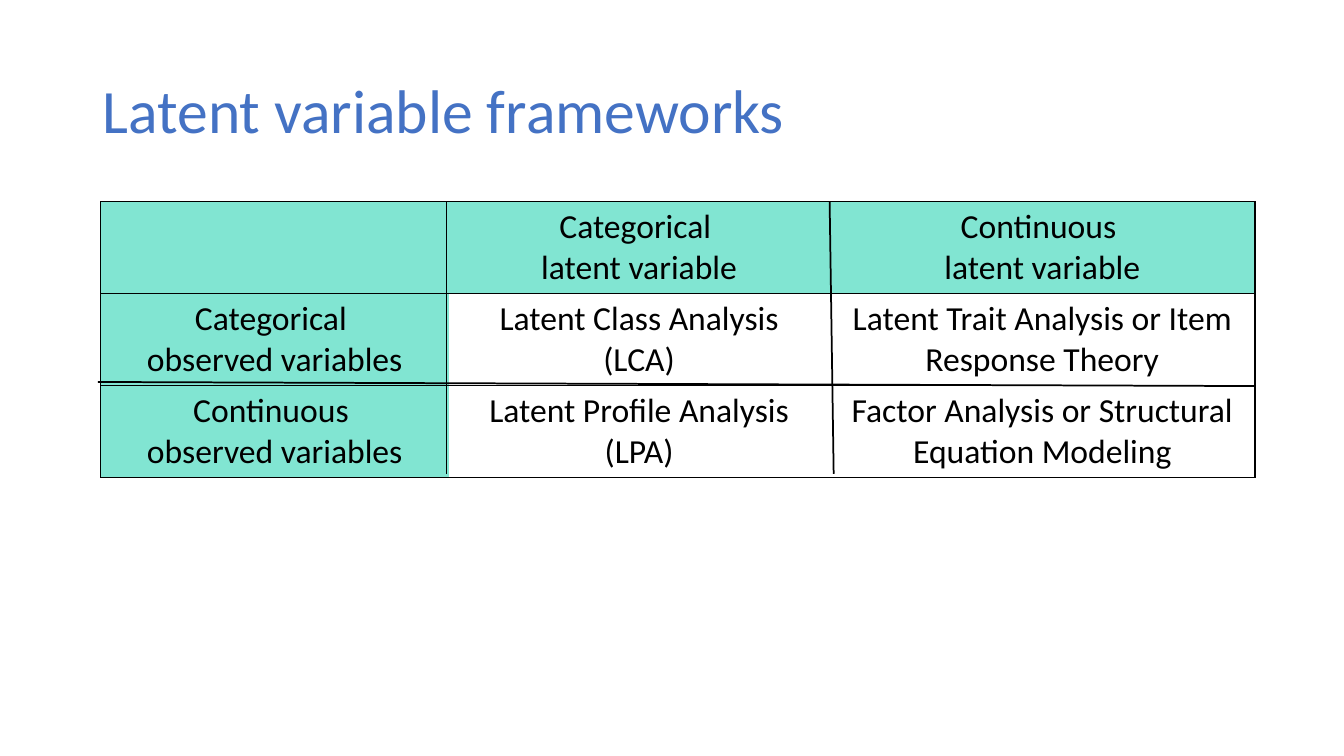
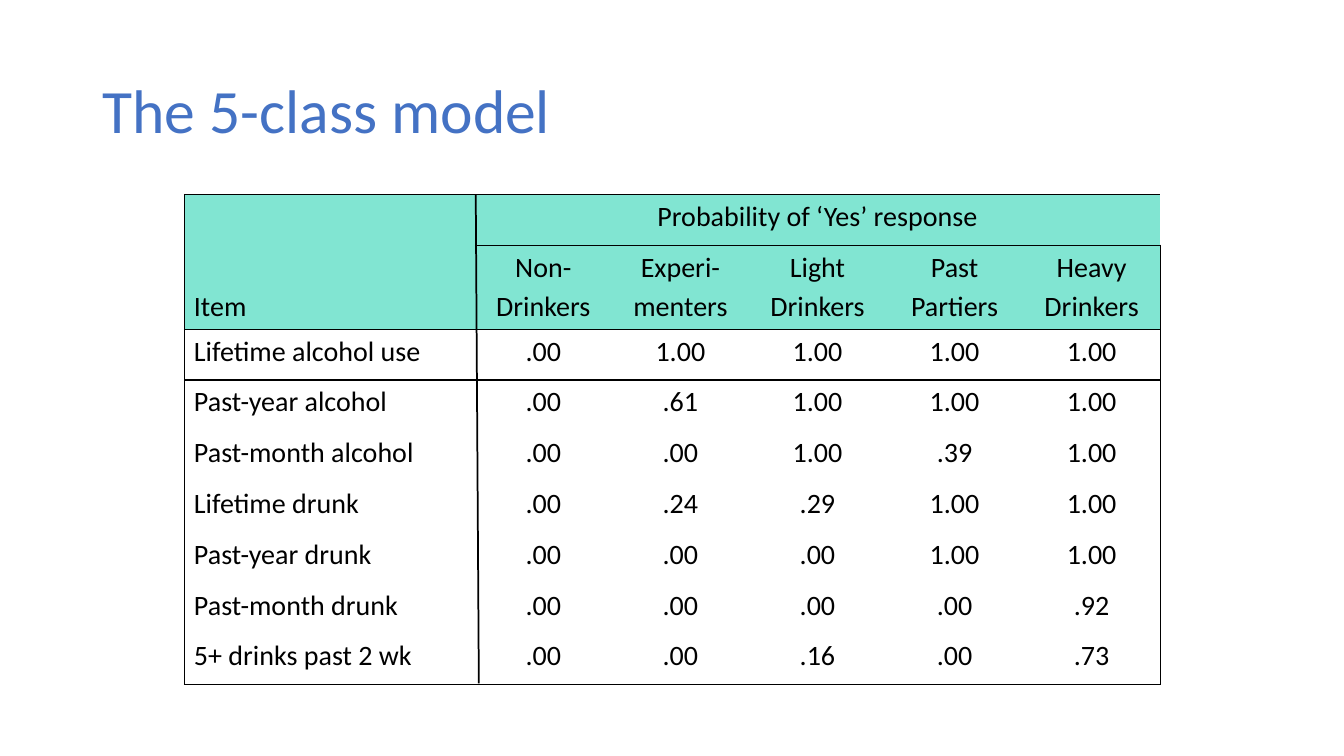
import dataclasses
import typing

import pptx
import pptx.dml.color
import pptx.enum.shapes
import pptx.enum.text
import pptx.oxml
import pptx.oxml.ns
import pptx.util

# Shared look
WIDE, HIGH = 13.33, 7.5
FONT = "Calibri"
BLUE, MINT, BLACK = "4472C4", "81E5D2", "000000"
PLAIN = "{2D5ABB26-0587-4C30-8999-92F81FD0307C}"  # table style without grid
BREAK, PARA = "|", "¶"  # marks for a line break and a new paragraph
MID = pptx.enum.text.MSO_ANCHOR.MIDDLE
TOP = pptx.enum.text.MSO_ANCHOR.TOP
LOW = pptx.enum.text.MSO_ANCHOR.BOTTOM
LEFT = pptx.enum.text.PP_ALIGN.LEFT
MIDST = pptx.enum.text.PP_ALIGN.CENTER
Spot = tuple[int, int]


@dataclasses.dataclass(frozen=True)
class Rule:
    """A straight line; ends in percent of the slide."""
    x1: float
    y1: float
    x2: float
    y2: float


@dataclasses.dataclass(frozen=True)
class Grid:
    """A table; lengths in percent of the slide."""
    left: float
    top: float
    cols: list[float]
    rows: list[float]
    texts: list[list[str]]
    size: int
    inset: float
    anchor: typing.Any
    heads: int            # filled rows at the top
    side: bool            # first column filled
    first: typing.Any     # alignment of the first column
    under: set[Spot]      # cells with a line below
    wide: Spot | None = None  # cell that spans to the last column
    low: Spot | None = None   # cell with its text at the bottom


@dataclasses.dataclass(frozen=True)
class Page:
    title: str
    grid: Grid
    rules: list[Rule]


# Helpers
def across(share: float) -> int:
    return pptx.util.Inches(WIDE * share / 100)


def down(share: float) -> int:
    return pptx.util.Inches(HIGH * share / 100)


def tint(code: str) -> pptx.dml.color.RGBColor:
    return pptx.dml.color.RGBColor.from_string(code)


def write(para: typing.Any, text: str, size: int, code: str) -> None:
    for num, part in enumerate(text.split(BREAK)):
        if num:
            para.add_line_break()
        run = para.add_run()
        run.text = part
        run.font.name = FONT
        run.font.size = pptx.util.Pt(size)
        run.font.color.rgb = tint(code)


def head(slide: typing.Any, text: str) -> None:
    box = slide.shapes.add_textbox(across(6.9), down(5.33), across(86.25), down(19.33))
    frame = box.text_frame
    frame.word_wrap = True
    frame.vertical_anchor = MID
    para = frame.paragraphs[0]
    para.line_spacing = 0.9
    write(para, text, 44, BLUE)


def draw(slide: typing.Any, rule: Rule) -> None:
    line = slide.shapes.add_connector(
        pptx.enum.shapes.MSO_CONNECTOR.STRAIGHT,
        across(rule.x1), down(rule.y1), across(rule.x2), down(rule.y2))
    line.line.color.rgb = tint(BLACK)
    line.line.width = pptx.util.Pt(1.25)
    props = line.element.find(pptx.oxml.ns.qn("p:spPr"))
    props.append(pptx.oxml.parse_xml(
        f"<a:effectLst {pptx.oxml.ns.nsdecls('a')}/>"))


def edge(cell: typing.Any, sides: str) -> None:
    props = cell._tc.get_or_add_tcPr()
    for side in sides:
        props.append(pptx.oxml.parse_xml(
            f'<a:ln{side} {pptx.oxml.ns.nsdecls("a")} w="12700"><a:solidFill>'
            f'<a:srgbClr val="{BLACK}"/></a:solidFill></a:ln{side}>'))


def sides(grid: Grid, row: int, col: int) -> str:
    tests = {
        "L": col == 0,
        "R": col == len(grid.cols) - 1,
        "T": row == 0 or (row - 1, col) in grid.under,
        "B": row == len(grid.rows) - 1 or (row, col) in grid.under,
    }
    return "".join(side for side, on in tests.items() if on)


def fill(cell: typing.Any, grid: Grid, row: int, col: int) -> None:
    edge(cell, sides(grid, row, col))
    if row < grid.heads or (grid.side and col == 0):
        cell.fill.solid()
        cell.fill.fore_color.rgb = tint(MINT)
    else:
        cell.fill.background()
    cell.margin_left = cell.margin_right = across(grid.inset)
    cell.vertical_anchor = LOW if (row, col) == grid.low else grid.anchor
    text = grid.texts[row][col]
    if not text:
        return
    frame = cell.text_frame
    for num, part in enumerate(text.split(PARA)):
        para = frame.add_paragraph() if num else frame.paragraphs[0]
        if num:
            para.space_before = pptx.util.Pt(grid.size * 0.2)
        para.alignment = MIDST if col else grid.first
        write(para, part, grid.size, BLACK)


def chart(slide: typing.Any, grid: Grid) -> None:
    shape = slide.shapes.add_table(
        len(grid.rows), len(grid.cols), across(grid.left), down(grid.top),
        across(sum(grid.cols)), down(sum(grid.rows)))
    table = shape.table
    table.first_row = table.horz_banding = False
    next(shape.element.iter(pptx.oxml.ns.qn("a:tableStyleId"))).text = PLAIN
    for col, share in enumerate(grid.cols):
        table.columns[col].width = across(share)
    for row, share in enumerate(grid.rows):
        table.rows[row].height = down(share)
        for col in range(len(grid.cols)):
            fill(table.cell(row, col), grid, row, col)
    if grid.wide:
        row, col = grid.wide
        table.cell(row, col).merge(table.cell(row, len(grid.cols) - 1))


# Content
FRAMES = Page(
    "Latent variable frameworks",
    Grid(
        left=7.5, top=26.67, cols=[25.88, 28.35, 31.65], rows=[12.18] * 3,
        texts=[
            ["", "Categorical |latent variable", "Continuous |latent variable"],
            ["Categorical |observed variables", "Latent Class Analysis (LCA)",
             "Latent Trait Analysis or Item Response Theory"],
            ["Continuous |observed variables", "Latent Profile Analysis (LPA)",
             "Factor Analysis or Structural Equation Modeling"],
        ],
        size=24, inset=1.2, anchor=MID, heads=1, side=True, first=MIDST,
        under={(row, col) for row in range(2) for col in range(3)}),
    [Rule(7.28, 50.53, 93.38, 51.07),
     Rule(61.73, 26.67, 62.03, 62.67),
     Rule(33.23, 26.67, 33.23, 62.67)])

ODDS = {
    "Lifetime alcohol use": ".00 1.00 1.00 1.00 1.00",
    "Past-year alcohol": ".00 .61 1.00 1.00 1.00",
    "Past-month alcohol": ".00 .00 1.00 .39 1.00",
    "Lifetime drunk": ".00 .24 .29 1.00 1.00",
    "Past-year drunk": ".00 .00 .00 1.00 1.00",
    "Past-month drunk": ".00 .00 .00 .00 .92",
    "5+ drinks past 2 wk": ".00 .00 .16 .00 .73",
}
MODEL = Page(
    "The 5-class model",
    Grid(
        left=13.73, top=25.73, cols=[21.6] + [10.2] * 5,
        rows=[6.72, 11.11] + [6.72] * len(ODDS),
        texts=[
            ["", "Probability of ‘Yes’ response", "", "", "", ""],
            ["Item", "Non-¶Drinkers", "Experi-¶menters", "Light¶Drinkers",
             "Past¶Partiers", "Heavy¶Drinkers"],
            *([item, *odds.split()] for item, odds in ODDS.items()),
        ],
        size=20, inset=0.7, anchor=TOP, heads=2, side=False, first=LEFT,
        under={(0, col) for col in range(1, 6)} | {(1, col) for col in range(6)},
        wide=(0, 1), low=(1, 0)),
    [Rule(35.4, 25.73, 35.63, 90.4),
     Rule(13.73, 50.27, 86.33, 50.27)])


def main() -> None:
    deck = pptx.Presentation()
    deck.slide_width, deck.slide_height = across(100), down(100)
    for page in (FRAMES, MODEL):
        slide = deck.slides.add_slide(deck.slide_layouts[6])
        head(slide, page.title)
        chart(slide, page.grid)
        for rule in page.rules:
            draw(slide, rule)
    deck.save("out.pptx")


if __name__ == "__main__":
    main()
